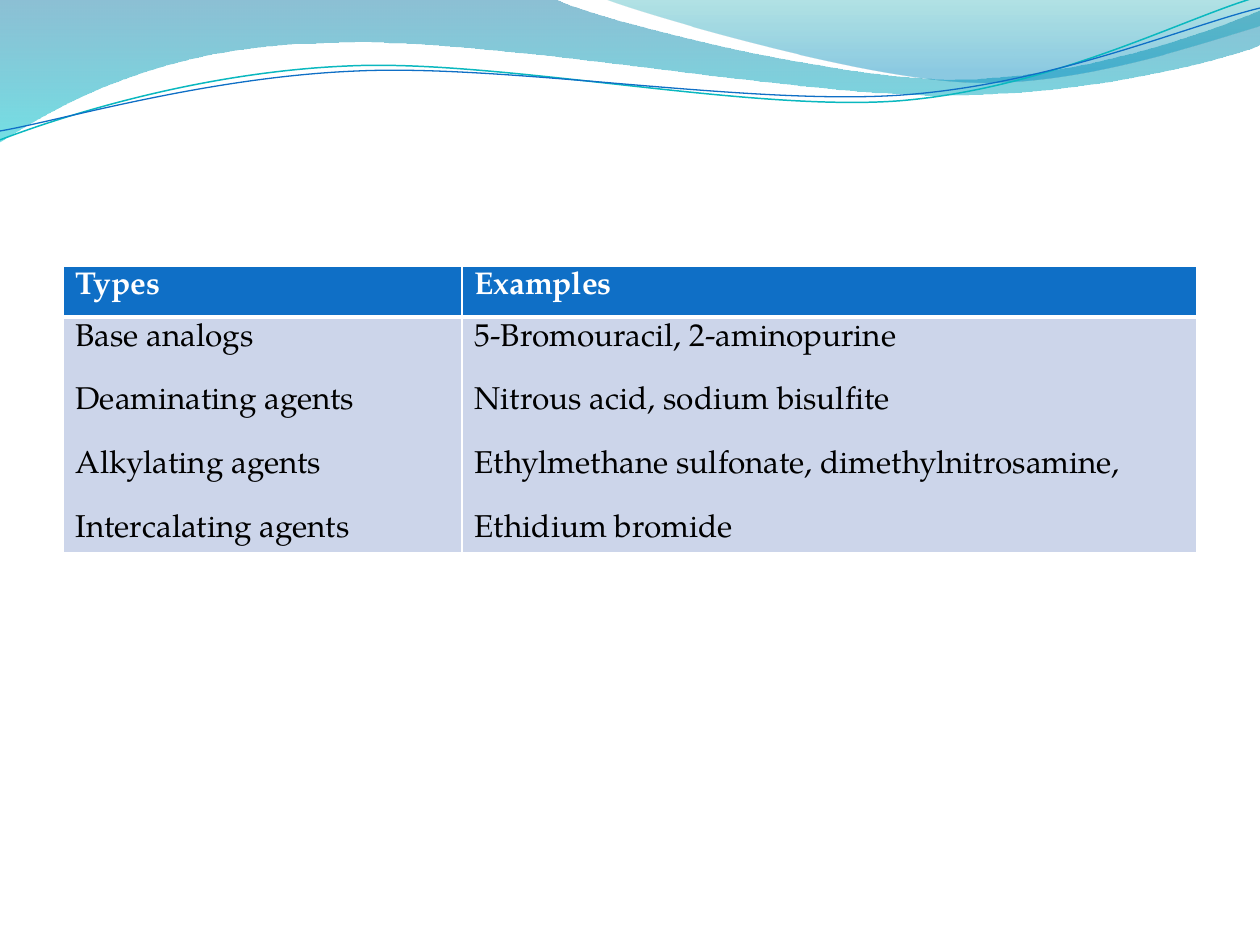
import math

import pptx
import pptx.dml.color
import pptx.oxml
import pptx.oxml.ns
import pptx.util

PX = 914400 // 126
FONT = "TeX Gyre Pagella"
WHITE = pptx.dml.color.RGBColor(0xFF, 0xFF, 0xFF)
BLACK = pptx.dml.color.RGBColor(0x00, 0x00, 0x00)
BLUE = pptx.dml.color.RGBColor(0x0F, 0x6F, 0xC6)
TEAL = pptx.dml.color.RGBColor(0x0A, 0xB8, 0xBF)
PALE_BLUE = pptx.dml.color.RGBColor(0xCC, 0xD5, 0xEA)
WAVE_BLUE = pptx.dml.color.RGBColor(0x00, 0x74, 0xA1)
WAVE_CYAN = pptx.dml.color.RGBColor(0x00, 0xC6, 0xCF)
CREST_GREEN = pptx.dml.color.RGBColor(0x00, 0xA1, 0xA9)
CREST_BLUE = pptx.dml.color.RGBColor(0x00, 0x8B, 0xBF)

WAVE = [
    [(0, 0)], [(554, -1)], [(600, 21), (837, 79), (955, 79)],
    [(1075, 79), (1207, 33), (1260, 11)], [(1261, 45)],
    [(1239, 55), (1096, 96), (940, 95)], [(784, 95), (481, 35), (324, 43)],
    [(163, 45), (58, 105), (-1, 142)],
]
CREST = [
    [(604, -1)], [(641, 14), (859, 78), (969, 82)],
    [(1079, 87), (1211, 40), (1260, 26)], [(1260, 0)],
]
TEAL_LINE = [
    [(0, 140)], [(60, 117), (199, 72), (349, 66)],
    [(498, 59), (747, 112), (898, 101)], [(1050, 89), (1182, 19), (1257, -3)],
]
BLUE_LINE = [
    [(0, 131)], [(59, 121), (207, 77), (357, 71)],
    [(508, 64), (752, 106), (903, 95)], [(1053, 84), (1186, 26), (1260, 8)],
]
LINE_TILT = 357.3
LINE_PIVOT = (629, 73)

HEADINGS = ["Types", "Examples"]
MUTAGENS = [
    ("Base analogs", "5-Bromouracil, 2-aminopurine"),
    ("Deaminating agents", "Nitrous acid, sodium bisulfite"),
    ("Alkylating agents", "Ethylmethane sulfonate, dimethylnitrosamine,"),
    ("Intercalating agents", "Ethidium bromide"),
]


def level(path):
    """Turn a tilted path back to its position before rotation."""
    angle = math.radians(360 - LINE_TILT)
    cos, sin = math.cos(angle), math.sin(angle)
    pivot_x, pivot_y = LINE_PIVOT
    return [[(pivot_x + (x - pivot_x) * cos - (y - pivot_y) * sin,
              pivot_y + (x - pivot_x) * sin + (y - pivot_y) * cos)
             for x, y in segment] for segment in path]


def add_outline(shapes, left, top, path, close):
    """Add a freeform whose three-point segments are cubic curves."""
    points = [(round((left + x) * PX), round((top + y) * PX))
              for segment in path for x, y in segment]
    builder = shapes.build_freeform(*points[0], scale=1.0)
    builder.add_line_segments(points[1:], close=close)
    shape = builder.convert_to_shape()
    shape.shadow.inherit = False
    lines = iter(list(shape._element.spPr.iter(pptx.oxml.ns.qn("a:lnTo"))))
    for segment in path[1:]:
        first, *others = [next(lines) for _ in segment]
        if others:
            curve = pptx.oxml.parse_xml(
                f'<a:cubicBezTo {pptx.oxml.ns.nsdecls("a")}/>')
            first.addprevious(curve)
            for line in (first, *others):
                curve.append(line[0])
                line.getparent().remove(line)
    return shape


def add_waves(slide, left, top):
    """Draw the two translucent waves."""
    for path, stops in (
        (WAVE, ((0, WAVE_BLUE, 45), (1, WAVE_CYAN, 55))),
        (CREST, ((0, CREST_GREEN, 30), (0.8, CREST_BLUE, 45))),
    ):
        shape = add_outline(slide.shapes, left, top, path, True)
        shape.line.fill.background()
        shape.fill.gradient()
        shape.fill.gradient_angle = 270
        for stop, (position, color, _) in zip(shape.fill.gradient_stops, stops):
            stop.position = position
            stop.color.rgb = color
        colors = shape._element.spPr.iter(pptx.oxml.ns.qn("a:srgbClr"))
        for element, (_, _, opacity) in zip(list(colors), stops):
            element.append(pptx.oxml.parse_xml(
                f'<a:alpha {pptx.oxml.ns.nsdecls("a")} val="{opacity * 1000}"/>'))


def add_flowing_lines(slide, left, top):
    """Draw the group of two tilted flowing lines."""
    group = slide.shapes.add_group_shape()
    for path, color, width in ((TEAL_LINE, TEAL, 0.85), (BLUE_LINE, BLUE, 0.75)):
        shape = add_outline(group.shapes, left, top, level(path), False)
        shape.rotation = LINE_TILT
        shape.fill.background()
        shape.line.color.rgb = color
        shape.line.width = pptx.util.Pt(width)


def set_borders(cell, top, bottom):
    """Give a cell white borders with the top and bottom widths in points."""
    properties = cell._tc.get_or_add_tcPr()
    for index, (side, width) in enumerate(zip("LRTB", (1, 1, top, bottom))):
        properties.insert(index, pptx.oxml.parse_xml(
            f'<a:ln{side} {pptx.oxml.ns.nsdecls("a")} w="{width * 12700}">'
            f'<a:solidFill><a:srgbClr val="{WHITE}"/></a:solidFill></a:ln{side}>'))


def fill_cell(cell, lines, fill, color, bold):
    """Write spaced lines into a filled cell."""
    cell.fill.solid()
    cell.fill.fore_color.rgb = fill
    cell.text_frame.text = "\n".join(lines)
    for index, paragraph in enumerate(cell.text_frame.paragraphs):
        if index:
            paragraph.space_before = pptx.util.Pt(18.25)
        for run in paragraph.runs:
            run.font.name = FONT
            run.font.size = pptx.util.Pt(18)
            run.font.bold = bold
            run.font.color.rgb = color


def add_mutagen_table(slide, left, top, width, height):
    """Add the table of mutagen types and examples."""
    frame = slide.shapes.add_table(2, 2, left * PX, top * PX, width * PX, height * PX)
    table = frame.table
    table.horz_banding = False
    header_height, type_width = 51, 399
    table.rows[0].height = header_height * PX
    table.rows[1].height = (height - header_height) * PX
    table.columns[0].width = type_width * PX
    table.columns[1].width = (width - type_width) * PX
    for column, (heading, entries) in enumerate(zip(HEADINGS, zip(*MUTAGENS))):
        header, body = table.cell(0, column), table.cell(1, column)
        fill_cell(header, [heading], BLUE, WHITE, True)
        fill_cell(body, entries, PALE_BLUE, BLACK, False)
        set_borders(header, 1, 3)
        set_borders(body, 3, 1)


def main():
    """Build the slide and save it."""
    presentation = pptx.Presentation()
    presentation.slide_width = pptx.util.Inches(10)
    presentation.slide_height = pptx.util.Inches(7.5)
    slide = presentation.slides.add_slide(presentation.slide_layouts[6])
    add_waves(slide, 0, 0)
    add_flowing_lines(slide, 0, 0)
    add_mutagen_table(slide, 63, 266, 1134, 285)
    presentation.save("out.pptx")


if __name__ == "__main__":
    main()
